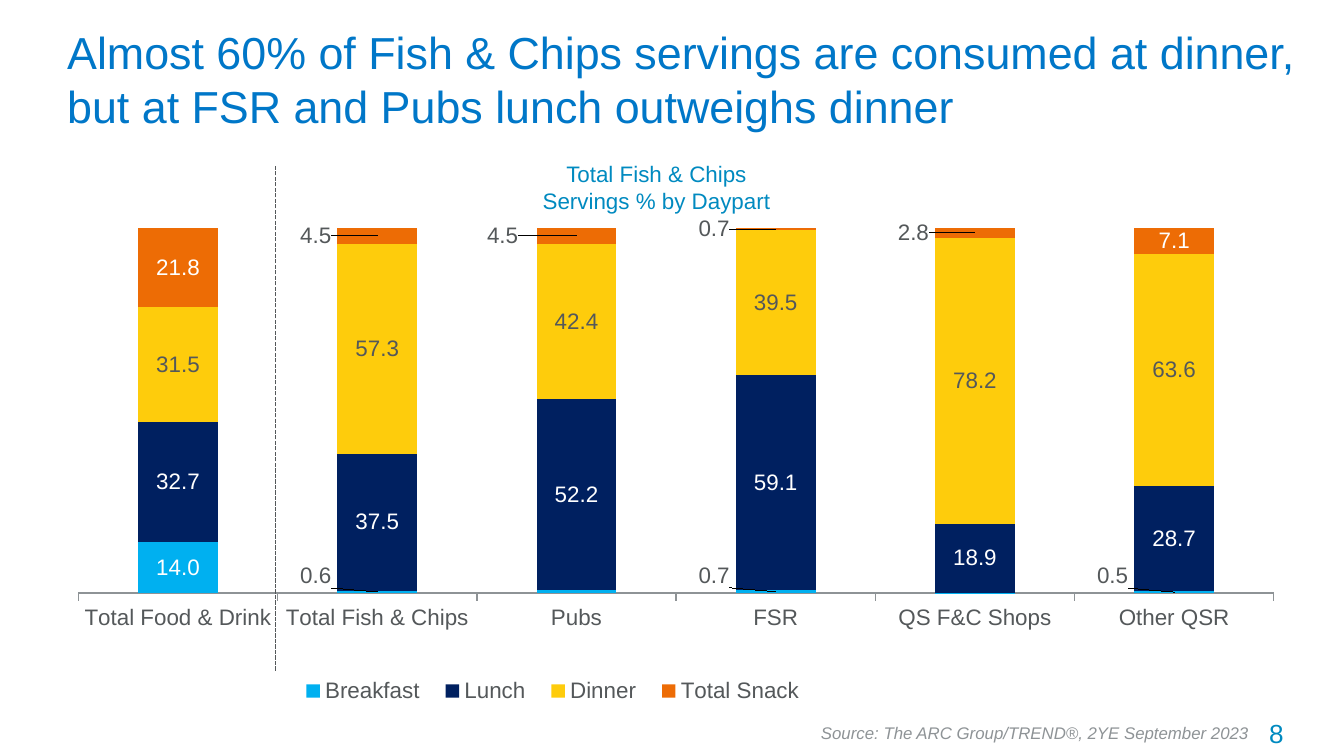
"""Build the slide on fish and chips servings by daypart."""
import pptx
import pptx.chart.data
import pptx.dml.color
import pptx.enum.chart
import pptx.enum.dml
import pptx.enum.shapes
import pptx.enum.text
import pptx.oxml
import pptx.oxml.ns
import pptx.util

Inches, Pt = pptx.util.Inches, pptx.util.Pt
RGB = pptx.dml.color.RGBColor
Align = pptx.enum.text.PP_ALIGN
BLUE, TEAL = RGB(0x00, 0x77, 0xC8), RGB(0x00, 0x8A, 0xC0)
DARK, GREY = RGB(0x54, 0x58, 0x5A), RGB(0x8E, 0x93, 0x96)
SKY, NAVY = RGB(0x00, 0xB0, 0xF0), RGB(0x00, 0x20, 0x60)
GOLD, RUST = RGB(0xFE, 0xCC, 0x0C), RGB(0xED, 0x6C, 0x05)
WHITE = RGB(0xFF, 0xFF, 0xFF)
FONT, FORMAT = "Arial", "#,##0.0"

TITLE = ("Almost 60% of Fish & Chips servings are consumed at dinner, "
         "but at FSR and Pubs lunch outweighs dinner")
TEXTS = [
    ("Total Fish & Chips\nServings % by Daypart", (3.93, 1.14, 1.91, 0.51), 12, TEAL, Align.CENTER, False),
    ("8", (8.85, 5.29, 0.8, 0.34), 14, TEAL, Align.RIGHT, False),
    ("Source: The ARC Group/TREND®, 2YE September 2023", (6.01, 5.33, 3.41, 0.25), 9, GREY, Align.LEFT, True),
]
CATS = ["Total Food & Drink", "Total Fish & Chips", "Pubs", "FSR", "QS F&C Shops", "Other QSR"]
SERIES = [
    ("Breakfast", [14, 0.6, 0.9, 0.7, 0.1, 0.5], SKY, WHITE),
    ("Lunch", [32.7, 37.5, 52.2, 59.1, 18.9, 28.7], NAVY, WHITE),
    ("Dinner", [31.5, 57.3, 42.4, 39.5, 78.2, 63.6], GOLD, DARK),
    ("Total Snack", [21.8, 4.5, 4.5, 0.7, 2.8, 7.1], RUST, WHITE),
]
MOVED = {
    "Breakfast": {1: (-0.05, -0.03), 3: (-0.05, -0.03), 5: (-0.05, -0.03)},
    "Total Snack": {1: (-0.05, 0), 2: (-0.06, 0), 3: (-0.05, 0), 4: (-0.05, 0)},
}
HIDDEN = {"Breakfast": [2, 4]}
NO_LEADER = """<c:extLst><c:ext uri="{CE6537A1-D6FC-4f65-9D91-7224C49458BB}">
<c15:showLeaderLines xmlns:c15="http://schemas.microsoft.com/office/drawing/2012/chart" val="0"/>
</c:ext></c:extLst>"""


def style(font, size, color, italic=False):
    font.name, font.size, font.italic = FONT, Pt(size), italic
    font.color.rgb = color


def node(body):
    return pptx.oxml.parse_xml(body.replace(">", f" {pptx.oxml.ns.nsdecls('c')}>", 1))


def layout(**parts):
    tags = "".join(f'<c:{tag} val="{val}"/>' for tag, val in parts.items())
    return node(f"<c:layout><c:manualLayout>{tags}</c:manualLayout></c:layout>")


def add_text(slide, text, box, size, color, align, italic):
    frame = slide.shapes.add_textbox(*map(Inches, box)).text_frame
    frame.text = text
    frame.word_wrap = align == Align.RIGHT
    for para in frame.paragraphs:
        para.alignment = align
        style(para.runs[0].font, size, color, italic)


def point_label(series, idx, color):
    style(series.points[idx].data_label.font, 12, color)
    return series._element.xpath(f"c:dLbls/c:dLbl[c:idx/@val='{idx}']")[0]


def add_labels(series, color):
    labels = series.data_labels
    labels.show_value = True
    labels.number_format, labels.number_format_is_linked = FORMAT, False
    style(labels.font, 12, color)
    for idx, (x, y) in MOVED.get(series.name, {}).items():
        label = point_label(series, idx, DARK)
        label.insert(1, layout(x=x, y=y))
        label.insert(2, node(f'<c:numFmt formatCode="{FORMAT}" sourceLinked="0"></c:numFmt>'))
    for idx in HIDDEN.get(series.name, []):
        label = point_label(series, idx, color)
        for child in list(label)[1:]:
            label.remove(child)
        label.append(node('<c:delete val="1"></c:delete>'))
    group = series._element.xpath("c:dLbls")[0]
    for old in group.xpath("c:showLeaderLines"):
        group.remove(old)
    group.append(node(NO_LEADER))


def add_chart(slide):
    data = pptx.chart.data.CategoryChartData(number_format=FORMAT)
    data.categories = CATS
    for name, vals, *_ in SERIES:
        data.add_series(name, vals)
    kind = pptx.enum.chart.XL_CHART_TYPE.COLUMN_STACKED_100
    box = map(Inches, (0.4, 1.34, 9.17, 3.94))
    chart = slide.shapes.add_chart(kind, *box, data).chart
    style(chart.font, 12, DARK)
    chart.has_title = False
    plot = chart.plots[0]
    plot.gap_width, plot.overlap, plot.vary_by_categories = 150, 100, False
    for series, (_, _, fill, color) in zip(plot.series, SERIES):
        series.format.fill.solid()
        series.format.fill.fore_color.rgb = fill
        add_labels(series, color)
    chart.value_axis.visible = False
    chart.value_axis.has_major_gridlines = False
    axis = chart.category_axis
    axis.major_tick_mark = pptx.enum.chart.XL_TICK_MARK.OUTSIDE
    axis.format.line.color.rgb = GREY
    axis.format.line.width = Pt(0.75)
    chart.has_legend = True
    legend = chart.legend
    legend.position = pptx.enum.chart.XL_LEGEND_POSITION.BOTTOM
    legend.include_in_layout = False
    legend._element.insert(1, layout(xMode="edge", yMode="edge", x=0.19, y=0.93, w=0.43, h=0.07))
    area = plot._element.getparent()
    for old in area.xpath("c:layout"):
        area.remove(old)
    area.insert(0, layout(layoutTarget="inner", xMode="edge", yMode="edge", x=0.02, y=0.09, w=0.97, h=0.69))


def add_rule(slide):
    kind = pptx.enum.shapes.MSO_CONNECTOR.STRAIGHT
    rule = slide.shapes.add_connector(kind, *map(Inches, (2.05, 4.99, 2.05, 1.23)))
    rule.line.color.rgb, rule.line.width = DARK, Pt(0.75)
    rule.line.dash_style = pptx.enum.dml.MSO_LINE.SQUARE_DOT
    rule._element.spPr.append(pptx.oxml.parse_xml(f"<a:effectLst {pptx.oxml.ns.nsdecls('a')}/>"))


def add_title(slide):
    title = slide.shapes.title
    title.left, title.top, title.width, title.height = map(Inches, (0.4, 0.23, 9.43, 0.71))
    frame = title.text_frame
    frame.text = TITLE
    frame.auto_size = pptx.enum.text.MSO_AUTO_SIZE.NONE
    frame.vertical_anchor = pptx.enum.text.MSO_ANCHOR.MIDDLE
    para = frame.paragraphs[0]
    para.alignment = Align.LEFT
    style(para.runs[0].font, 24, BLUE)


def main():
    deck = pptx.Presentation()
    deck.slide_width, deck.slide_height = Inches(10), Inches(10) * 9 // 16
    slide = deck.slides.add_slide(deck.slide_layouts[5])
    add_title(slide)
    add_chart(slide)
    add_rule(slide)
    for item in TEXTS:
        add_text(slide, *item)
    deck.save("out.pptx")


if __name__ == "__main__":
    main()
